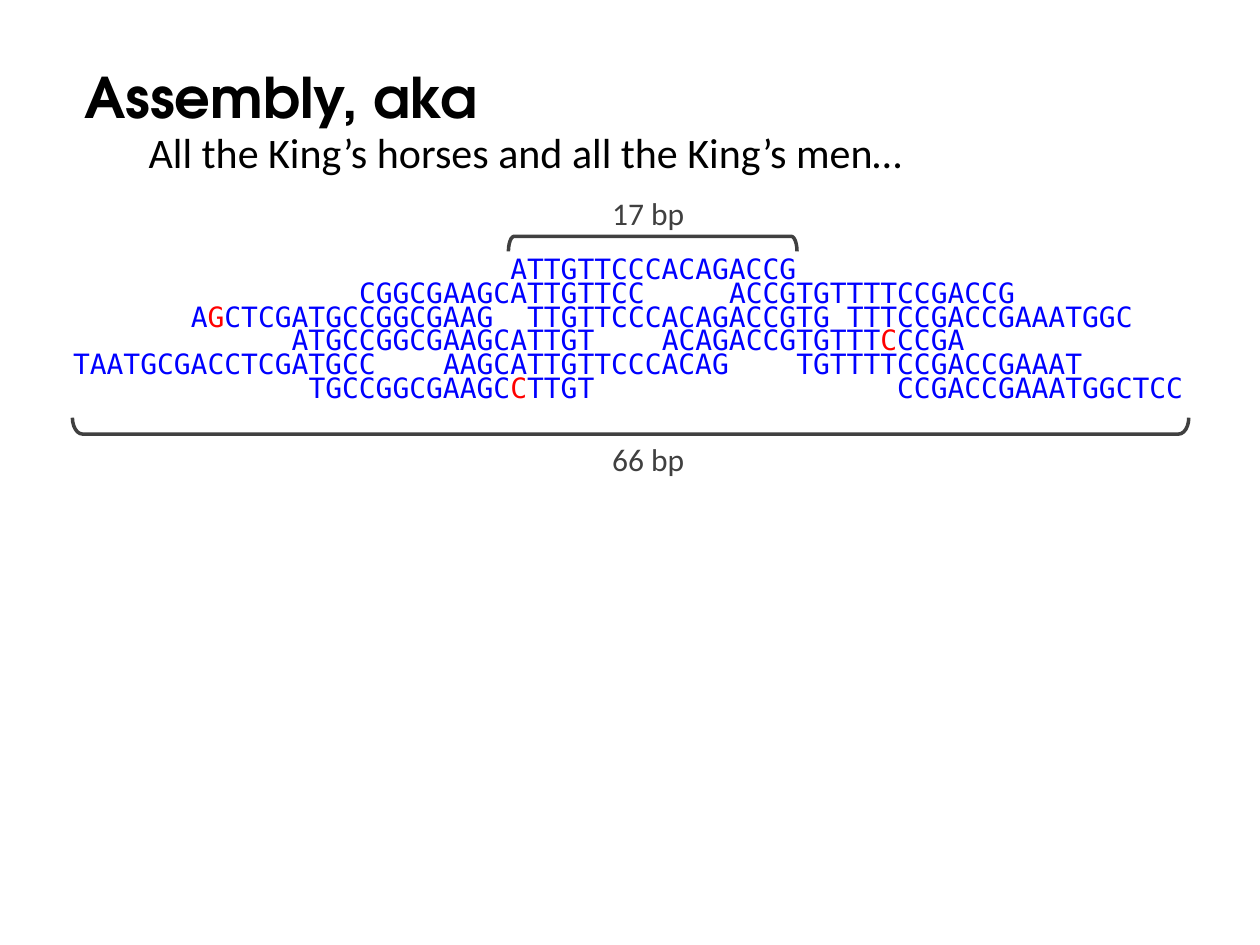
from dataclasses import dataclass
from typing import Optional

from lxml.etree import SubElement
from pptx import Presentation
from pptx.dml.color import RGBColor
from pptx.enum.shapes import MSO_SHAPE
from pptx.enum.text import MSO_ANCHOR, MSO_AUTO_SIZE, PP_ALIGN
from pptx.oxml.ns import qn
from pptx.util import Inches, Pt

COLORS = {"text": "000000", "base": "0000FF", "error": "FF0000", "scale": "404040"}
MONO = "DejaVu Sans Mono"
BASE_PITCH = 2.67 / 20
ROW_PITCH = 0.75 / 4
FIRST_LEFT, FIRST_TOP = 0.45, 2


@dataclass
class Read:
    """A sequenced fragment; column counts bases from the start of the assembly."""
    row: int
    column: int
    bases: str
    error: Optional[int] = None


@dataclass
class Scale:
    """A bracket, given before rotation, with its length label."""
    label: str
    label_top: float
    left: float
    top: float
    width: float
    height: float
    rotation: int
    curve: float


READS = [
    Read(0, 26, "ATTGTTCCCACAGACCG"),
    Read(1, 17, "CGGCGAAGCATTGTTCC"),
    Read(1, 39, "ACCGTGTTTTCCGACCG"),
    Read(2, 46, "TTTCCGACCGAAATGGC"),
    Read(2, 27, "TTGTTCCCACAGACCGTG"),
    Read(2, 7, "AGCTCGATGCCGGCGAAG", error=1),
    Read(3, 13, "ATGCCGGCGAAGCATTGT"),
    Read(4, 0, "TAATGCGACCTCGATGCC"),
    Read(3, 35, "ACAGACCGTGTTTCCCGA", error=13),
    Read(4, 22, "AAGCATTGTTCCCACAG"),
    Read(4, 43, "TGTTTTCCGACCGAAAT"),
    Read(5, 49, "CCGACCGAAATGGCTCC"),
    Read(5, 14, "TGCCGGCGAAGCCTTGT", error=12),
]
SCALES = [
    Scale("17 bp", 1.49, 5.12, 0.79, 0.12, 2.29, 90, 0.383),
    Scale("66 bp", 3.44, 4.94, -1.05, 0.13, 8.86, 270, 0.617),
]


def add_run(paragraph, text: str, *, size: float, font: str, color: str,
            bold: bool = False) -> None:
    run = paragraph.add_run()
    run.text = text
    run.font.size = Pt(size)
    run.font.name = font
    run.font.bold = bold
    run.font.color.rgb = RGBColor.from_string(COLORS[color])


def add_text_box(shapes, left: float, top: float, width: float, height: float,
                 wrap: bool = True):
    """Add an empty text box and return its text frame."""
    box = shapes.add_textbox(Inches(left), Inches(top), Inches(width), Inches(height))
    box.text_frame.word_wrap = wrap
    return box.text_frame


def add_read(shapes, read: Read) -> None:
    frame = add_text_box(shapes,
                         FIRST_LEFT + read.column * BASE_PITCH,
                         FIRST_TOP + read.row * ROW_PITCH,
                         len(read.bases) * BASE_PITCH + 0.25, 0.38)
    frame.margin_left, frame.margin_right = Inches(0.13), Inches(0.1)
    frame.margin_top, frame.margin_bottom = 0, Inches(0.05)
    if read.error is None:
        parts = [(read.bases, "base")]
    else:
        parts = [(read.bases[:read.error], "base"),
                 (read.bases[read.error], "error"),
                 (read.bases[read.error + 1:], "base")]
    for text, color in parts:
        add_run(frame.paragraphs[0], text, size=16, font=MONO, color=color)


def add_scale(shapes, scale: Scale) -> None:
    group = shapes.add_group_shape()
    bracket = group.shapes.add_shape(
        MSO_SHAPE.LEFT_BRACKET, Inches(scale.left), Inches(scale.top),
        Inches(scale.width), Inches(scale.height))
    bracket.rotation = scale.rotation
    bracket.adjustments[0] = scale.curve
    bracket.shadow.inherit = False
    bracket.fill.background()
    bracket.line.color.rgb = RGBColor.from_string(COLORS["scale"])
    bracket.line.width = Pt(2)
    frame = add_text_box(group.shapes, 4.76, scale.label_top, 0.78, 0.4, wrap=False)
    SubElement(frame.paragraphs[0]._p.get_or_add_pPr(), qn("a:buNone"))
    add_run(frame.paragraphs[0], scale.label, size=18, font="Calibri", color="scale")


def format_title(title) -> None:
    title.left, title.top = Inches(1.08), Inches(0.99)
    title.width, title.height = Inches(8.1), Inches(0.42)
    frame = title.text_frame
    frame.auto_size = MSO_AUTO_SIZE.NONE
    frame.word_wrap = True
    frame.vertical_anchor = MSO_ANCHOR.MIDDLE
    frame.paragraphs[0].alignment = PP_ALIGN.LEFT
    add_run(frame.paragraphs[0], "All the King’s horses and all the King’s men…",
            size=24, font="Calibri", color="text")


def main() -> None:
    presentation = Presentation()
    presentation.slide_width, presentation.slide_height = Inches(10), Inches(7.5)
    slide = presentation.slides.add_slide(presentation.slide_layouts[5])
    format_title(slide.shapes.title)
    for read in READS:
        add_read(slide.shapes, read)
    heading = add_text_box(slide.shapes, 0.57, 0.45, 7.45, 0.64)
    add_run(heading.paragraphs[0], "Assembly, aka", size=32,
            font="TeX Gyre Adventor", color="text", bold=True)
    for scale in SCALES:
        add_scale(slide.shapes, scale)
    presentation.save("out.pptx")


if __name__ == "__main__":
    main()
